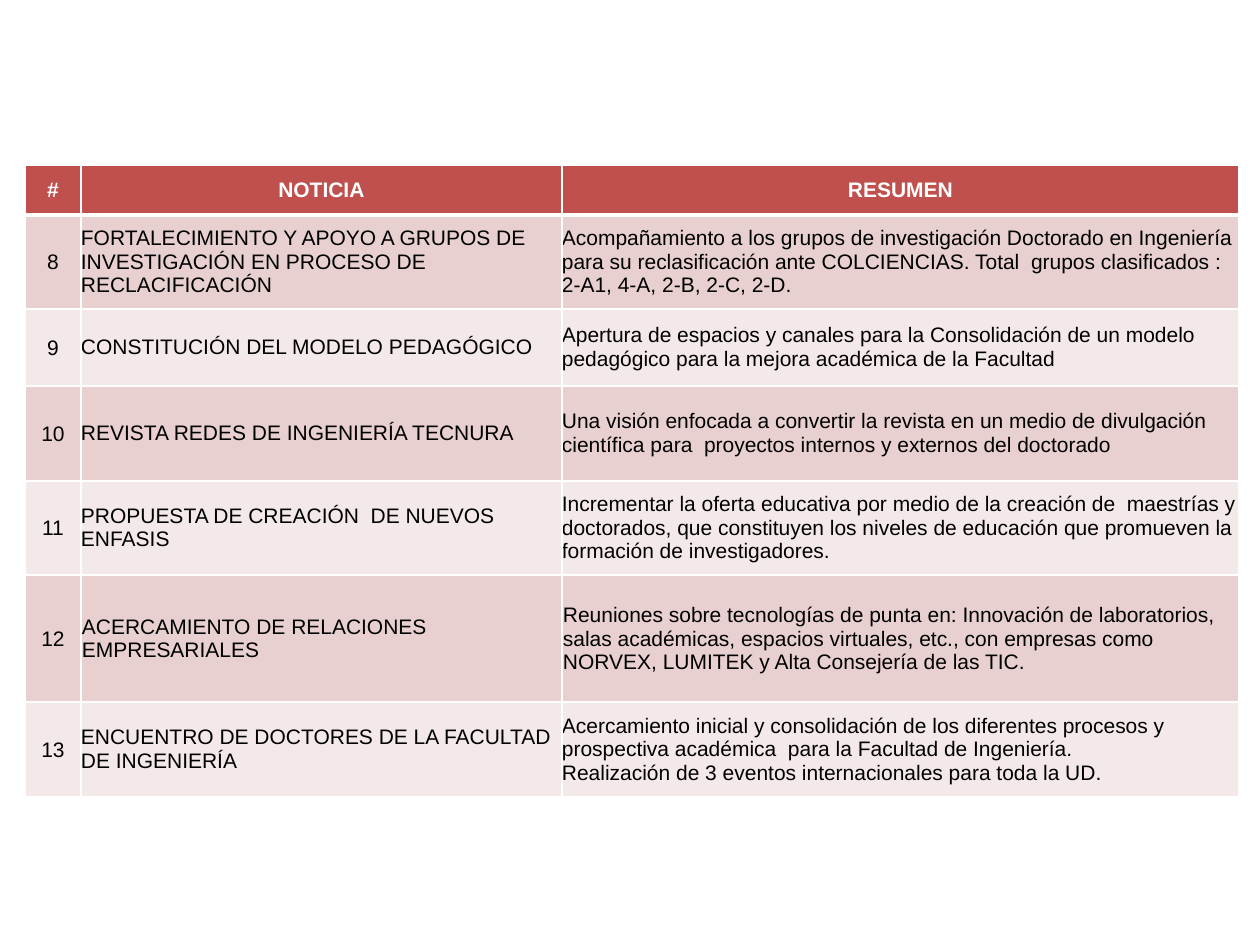
"""Build a slide with a table of numbered faculty news items and their summaries."""
import pptx
import pptx.dml.color
import pptx.enum.text
import pptx.oxml.ns
import pptx.util
from lxml import etree

PX = 914400 // 126
WHITE, BLACK, RED = "FFFFFF", "000000", "C0504D"
BANDS = ["F4E9E9", "E8D0D0"]


def color(hex_value):
    return pptx.dml.color.RGBColor.from_string(hex_value)


def add_border(cell, side, points):
    properties = cell._tc.get_or_add_tcPr()
    line = etree.SubElement(properties, pptx.oxml.ns.qn(f"a:ln{side}"), w=str(pptx.util.Pt(points)))
    fill = etree.SubElement(line, pptx.oxml.ns.qn("a:solidFill"))
    etree.SubElement(fill, pptx.oxml.ns.qn("a:srgbClr"), val=WHITE)


news = [
    ("#", "NOTICIA", "RESUMEN"),
    ("8", "FORTALECIMIENTO Y APOYO A GRUPOS DE INVESTIGACIÓN EN PROCESO DE RECLACIFICACIÓN",
     "Acompañamiento a los grupos de investigación Doctorado en Ingeniería para su reclasificación "
     "ante COLCIENCIAS. Total  grupos clasificados : 2-A1, 4-A, 2-B, 2-C, 2-D."),
    ("9", "CONSTITUCIÓN DEL MODELO PEDAGÓGICO",
     "Apertura de espacios y canales para la Consolidación de un modelo pedagógico para la mejora "
     "académica de la Facultad"),
    ("10", "REVISTA REDES DE INGENIERÍA TECNURA",
     "Una visión enfocada a convertir la revista en un medio de divulgación científica para  "
     "proyectos internos y externos del doctorado"),
    ("11", "PROPUESTA DE CREACIÓN  DE NUEVOS ENFASIS",
     "Incrementar la oferta educativa por medio de la creación de  maestrías y doctorados, que "
     "constituyen los niveles de educación que promueven la formación de investigadores."),
    ("12", "ACERCAMIENTO DE RELACIONES EMPRESARIALES",
     "Reuniones sobre tecnologías de punta en: Innovación de laboratorios, salas académicas, "
     "espacios virtuales, etc., con empresas como NORVEX, LUMITEK y Alta Consejería de las TIC."),
    ("13", "ENCUENTRO DE DOCTORES DE LA FACULTAD DE INGENIERÍA",
     "Acercamiento inicial y consolidación de los diferentes procesos y prospectiva académica  "
     "para la Facultad de Ingeniería.\nRealización de 3 eventos internacionales para toda la UD."),
]
column_widths = [56, 481, 677]
row_heights = [50, 94, 77, 95, 94, 127, 95]

presentation = pptx.Presentation()
presentation.slide_width = 1260 * PX
presentation.slide_height = 945 * PX
slide = presentation.slides.add_slide(presentation.slide_layouts[6])

news_table = slide.shapes.add_table(
    len(news), len(column_widths), 25 * PX, 165 * PX,
    sum(column_widths) * PX, sum(row_heights) * PX).table
for column, width in zip(news_table.columns, column_widths):
    column.width = width * PX
for row, height in zip(news_table.rows, row_heights):
    row.height = height * PX

for row_index, entry in enumerate(news):
    header = row_index == 0
    for column_index, content in enumerate(entry):
        cell = news_table.cell(row_index, column_index)
        centred = header or column_index == 0
        inset = PX if centred or entry[0] == "12" else 0
        cell.margin_left = cell.margin_top = cell.margin_right = inset
        cell.margin_bottom = 0
        cell.vertical_anchor = pptx.enum.text.MSO_ANCHOR.MIDDLE
        for side in "LRTB":
            thick = (header and side == "B") or (row_index == 1 and side == "T")
            add_border(cell, side, 3 if thick else 1)
        cell.fill.solid()
        cell.fill.fore_color.rgb = color(RED if header else BANDS[row_index % 2])
        cell.text_frame.text = content
        for paragraph in cell.text_frame.paragraphs:
            paragraph.alignment = (pptx.enum.text.PP_ALIGN.CENTER if centred
                                   else pptx.enum.text.PP_ALIGN.LEFT)
            for run in paragraph.runs:
                run.font.name = "Arial"
                run.font.size = pptx.util.Pt(12)
                run.font.bold = header
                run.font.color.rgb = color(WHITE if header else BLACK)

presentation.save("out.pptx")
